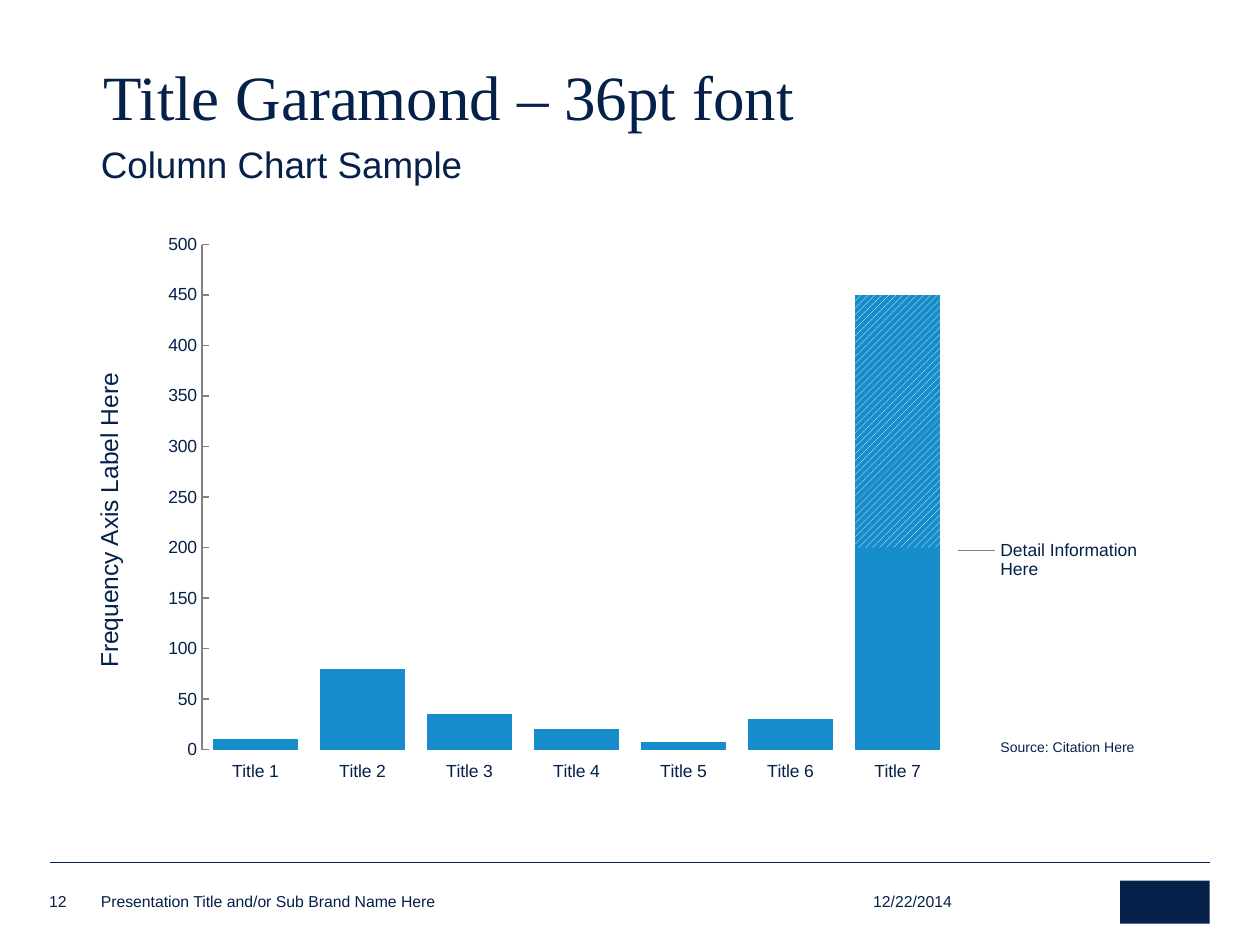
from copy import deepcopy
from dataclasses import dataclass

from lxml.etree import SubElement
from pptx import Presentation
from pptx.chart.data import CategoryChartData
from pptx.dml.color import RGBColor
from pptx.enum.chart import XL_CHART_TYPE, XL_TICK_MARK
from pptx.enum.dml import MSO_PATTERN
from pptx.enum.shapes import MSO_CONNECTOR, MSO_SHAPE
from pptx.enum.text import MSO_ANCHOR, MSO_AUTO_SIZE, PP_ALIGN
from pptx.oxml.ns import qn
from pptx.util import Inches, Pt


@dataclass(frozen=True)
class Theme:
    navy: RGBColor = RGBColor(0x05, 0x20, 0x49)
    blue: RGBColor = RGBColor(0x17, 0x8C, 0xCB)
    grey: RGBColor = RGBColor(0x80, 0x80, 0x80)
    white: RGBColor = RGBColor(0xFF, 0xFF, 0xFF)
    heading_font: str = "Times New Roman"
    body_font: str = "Arial"
    title_size: int = 36
    subtitle_size: int = 21
    axis_title_size: int = 14
    label_size: int = 10
    footer_size: int = 9
    source_size: int = 8


THEME = Theme()


def place(shape, left, top, width, height):
    shape.left, shape.top = Inches(left), Inches(top)
    shape.width, shape.height = Inches(width), Inches(height)


def format_font(font, size, name=THEME.body_font):
    font.size, font.name = Pt(size), name
    font.color.rgb = THEME.navy


def write_text(shape, text, size, font=THEME.body_font, anchor=MSO_ANCHOR.TOP,
               align=PP_ALIGN.LEFT, spacing=1.0, margin=None):
    frame = shape.text_frame
    frame.word_wrap = True
    frame.auto_size = MSO_AUTO_SIZE.NONE
    frame.vertical_anchor = anchor
    if margin is not None:
        frame.margin_left = frame.margin_right = Inches(margin)
        frame.margin_top = frame.margin_bottom = Inches(margin)
    paragraph = frame.paragraphs[0]
    paragraph.text = text
    paragraph.alignment = align
    paragraph.line_spacing = spacing
    paragraph.space_before = Pt(0)
    for run in paragraph.runs:
        format_font(run.font, size, font)
    # A line break carries its own text size
    for line_break in paragraph._p.findall(qn("a:br")):
        line_break.append(deepcopy(paragraph.runs[0]._r.rPr))


def add_label(slide, box, text, size, **text_format):
    label = slide.shapes.add_textbox(*map(Inches, box))
    write_text(label, text, size, margin=0, **text_format)
    return label


def add_rule(slide, left, right, y, color, width):
    rule = slide.shapes.add_connector(
        MSO_CONNECTOR.STRAIGHT, Inches(left), Inches(y), Inches(right), Inches(y))
    rule.line.color.rgb = color
    rule.line.width = Pt(width)
    SubElement(rule._element.spPr, qn("a:effectLst"))


def add_headings(slide):
    title, subtitle = slide.shapes.title, slide.placeholders[1]
    place(title, 0.72, 0.48, 8.84, 0.63)
    write_text(title, "Title Garamond – 36pt font", THEME.title_size,
               font=THEME.heading_font, anchor=MSO_ANCHOR.BOTTOM, spacing=0.85)
    place(subtitle, 0.7, 1.11, 8.83, 0.42)
    write_text(subtitle, "Column Chart Sample", THEME.subtitle_size,
               anchor=MSO_ANCHOR.BOTTOM, spacing=0.9)
    properties = subtitle.text_frame.paragraphs[0]._p.get_or_add_pPr()
    properties.set("marL", str(Inches(0.18)))
    properties.set("indent", str(-Inches(0.18)))
    SubElement(properties, qn("a:buNone"))


def set_plot_area(chart, x, y, w, h):
    """Fix the inner plot area, given as fractions of the chart."""
    plot_area = chart._chartSpace.find(".//" + qn("c:plotArea"))
    for old_layout in plot_area.findall(qn("c:layout")):
        plot_area.remove(old_layout)
    layout = SubElement(plot_area, qn("c:layout"))
    plot_area.insert(0, layout)
    manual = SubElement(layout, qn("c:manualLayout"))
    settings = {"layoutTarget": "inner", "xMode": "edge", "yMode": "edge",
                "x": x, "y": y, "w": w, "h": h}
    for tag, value in settings.items():
        SubElement(manual, qn("c:" + tag)).set("val", str(value))


def format_axes(chart):
    category_axis, value_axis = chart.category_axis, chart.value_axis
    for axis in (category_axis, value_axis):
        axis.has_major_gridlines = False
        axis.minor_tick_mark = XL_TICK_MARK.NONE
        format_font(axis.tick_labels.font, THEME.label_size)
    category_axis.major_tick_mark = XL_TICK_MARK.OUTSIDE
    category_axis.format.line.fill.background()
    value_axis.major_tick_mark = XL_TICK_MARK.INSIDE
    value_axis.minimum_scale, value_axis.maximum_scale = 0, 500
    value_axis.major_unit = 50
    value_axis.format.line.color.rgb = THEME.grey
    value_axis.format.line.width = Pt(1)


def add_column_chart(slide):
    data = CategoryChartData()
    data.categories = [f"Title {number}" for number in range(1, 8)]
    data.add_series("Series 1", (10, 80, 35, 20, 8, 30, 200))
    data.add_series("Series 2", [None] * 6 + [250])
    box = map(Inches, (1.12, 1.79, 7.19, 4.44))
    chart = slide.shapes.add_chart(XL_CHART_TYPE.COLUMN_STACKED, *box, data).chart
    chart.has_legend = chart.has_title = False
    format_font(chart.font, THEME.label_size)
    format_axes(chart)

    plot = chart.plots[0]
    plot.gap_width, plot.overlap = 25, 100
    plot.vary_by_categories = False
    for series in plot.series:
        series.format.fill.solid()
        series.format.fill.fore_color.rgb = THEME.blue
    hatch = plot.series[1].points[6].format.fill
    hatch.patterned()
    hatch.pattern = MSO_PATTERN.WIDE_UPWARD_DIAGONAL
    hatch.fore_color.rgb = THEME.white
    hatch.back_color.rgb = THEME.blue
    set_plot_area(chart, 0.067, 0.034, 0.827, 0.903)


def add_annotations(slide):
    axis_title = add_label(slide, (-0.94, 4.02, 3.64, 0.22), "Frequency Axis Label Here",
                           THEME.axis_title_size, align=PP_ALIGN.CENTER, spacing=0.9)
    axis_title.rotation = 270
    add_rule(slide, 7.6, 7.9, 4.37, THEME.grey, 1)
    add_label(slide, (7.94, 4.3, 1.66, 0.31), "Detail Information\nHere",
              THEME.label_size, spacing=0.9)
    add_label(slide, (7.94, 5.88, 1.66, 0.12), "Source: Citation Here",
              THEME.source_size, spacing=0.9)


def add_footer(slide):
    add_rule(slide, 0.4, 9.6, 6.84, THEME.navy, 0.25)
    entries = (("12", 0.39, 0.27),
               ("Presentation Title and/or Sub Brand Name Here", 0.8, 4.71),
               ("12/22/2014", 6.93, 1.01))
    for text, left, width in entries:
        add_label(slide, (left, 7.06, width, 0.17), text, THEME.footer_size,
                  anchor=MSO_ANCHOR.BOTTOM)
    emblem = slide.shapes.add_shape(
        MSO_SHAPE.RECTANGLE, *map(Inches, (8.89, 6.99, 0.71, 0.34)))
    emblem.shadow.inherit = False
    emblem.fill.solid()
    emblem.fill.fore_color.rgb = THEME.navy
    emblem.line.fill.background()


def main():
    presentation = Presentation()
    presentation.slide_width, presentation.slide_height = Inches(10), Inches(7.5)
    slide = presentation.slides.add_slide(presentation.slide_layouts[1])
    add_headings(slide)
    add_column_chart(slide)
    add_annotations(slide)
    add_footer(slide)
    presentation.save("out.pptx")


if __name__ == "__main__":
    main()
